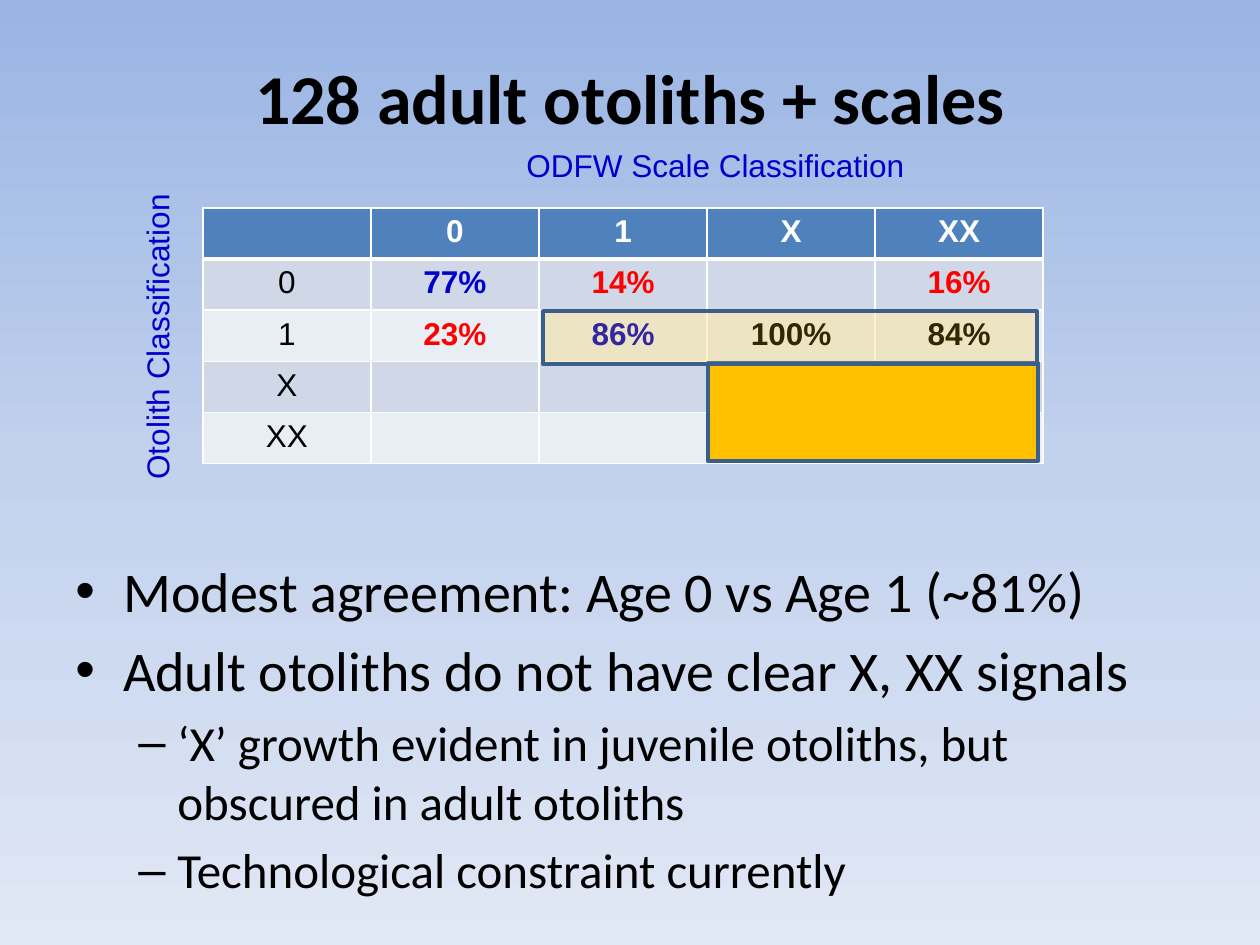
from lxml import etree
from pptx import Presentation
from pptx import util as u
from pptx.dml import color
from pptx.enum import shapes, text
from pptx.oxml import ns

BLACK, WHITE, BLUE, RED = "000000", "FFFFFF", "0000CC", "FF0000"
AMBER, OUTLINE, HEADER = "FFC000", "3A5F8C", "4F81BD"
BANDS = ["D0D8E8", "E9EDF4"]
BACKGROUND = {0: "9AB5E4", 50: "C2D1ED", 100: "E1E8F5"}
CLASSES = ["0", "1", "X", "XX"]
AGREEMENT = {
    (1, 1): ("77%", BLUE), (1, 2): ("14%", RED), (1, 4): ("16%", RED),
    (2, 1): ("23%", RED), (2, 2): ("86%", BLUE),
    (2, 3): ("100%", BLACK), (2, 4): ("84%", BLACK),
}
FINDINGS = [
    (0, "Modest agreement: Age 0 vs Age 1 (~81%)"),
    (0, "Adult otoliths do not have clear X, XX signals"),
    (1, "‘X’ growth evident in juvenile otoliths, but obscured in adult otoliths"),
    (1, "Technological constraint currently"),
]
LEVELS = [
    {"mark": "•", "size": 32, "left": 0.38, "hang": 0.38},
    {"mark": "–", "size": 28, "left": 0.81, "hang": 0.31},
]


def rgb(value):
    return color.RGBColor.from_string(value)


def place(left, top, width, height):
    return [u.Inches(length) for length in (left, top, width, height)]


def paint(fill, value):
    fill.solid()
    fill.fore_color.rgb = rgb(value)


def add_element(parent, tag, **values):
    return etree.SubElement(parent, ns.qn(tag), values)


def format_font(font, value, **formats):
    for name, setting in formats.items():
        setattr(font, name, setting)
    font.color.rgb = rgb(value)


def set_background(page):
    fill = page.background.fill
    fill.gradient()
    fill.gradient_angle = 270
    stops = page.element.find(".//" + ns.qn("a:gsLst"))
    for stop in list(stops):
        stops.remove(stop)
    for percent, value in BACKGROUND.items():
        stop = add_element(stops, "a:gs", pos=str(percent * 1000))
        add_element(stop, "a:srgbClr", val=value)


def set_title(page, words):
    title = page.shapes.title
    title.left, title.top, title.width, title.height = place(0.5, 0.14, 9, 1.25)
    frame = title.text_frame
    frame.text = words
    frame.vertical_anchor = text.MSO_ANCHOR.MIDDLE
    para = frame.paragraphs[0]
    para.alignment = text.PP_ALIGN.CENTER
    format_font(para.runs[0].font, BLACK, name="Calibri", size=u.Pt(40), bold=True)


def border_cell(cell, bottom):
    properties = cell._tc.get_or_add_tcPr()
    for side, points in {"L": 1, "R": 1, "T": 1, "B": bottom}.items():
        line = add_element(properties, "a:ln" + side, w=str(u.Pt(points)))
        add_element(add_element(line, "a:solidFill"), "a:srgbClr", val=WHITE)


def cell_content(row, column):
    if row == 0:
        return (CLASSES[column - 1] if column else "", WHITE)
    if column == 0:
        return (CLASSES[row - 1], BLACK)
    return AGREEMENT.get((row, column), ("", BLACK))


def add_agreement_table(page):
    count = len(CLASSES) + 1
    box = page.shapes.add_table(count, count, *place(1.61, 1.65, 6.67, 2.03))
    table = box.table
    table.first_row = table.horz_banding = False
    for row in range(count):
        for column in range(count):
            cell = table.cell(row, column)
            border_cell(cell, 1 if row else 3)
            paint(cell.fill, BANDS[(row - 1) % 2] if row else HEADER)
            words, value = cell_content(row, column)
            cell.text = words
            para = cell.text_frame.paragraphs[0]
            para.alignment = text.PP_ALIGN.CENTER
            format_font(para.font, value, name="Arial", size=u.Pt(18),
                        bold=row == 0 or column > 0)


def add_axis_label(page, words, position, rotation=0):
    box = page.shapes.add_textbox(*place(*position))
    box.rotation = rotation
    frame = box.text_frame
    frame.word_wrap = False
    frame.text = words
    format_font(frame.paragraphs[0].runs[0].font, BLUE, name="Arial", size=u.Pt(18))


def add_highlight(page, position, opacity=100):
    box = page.shapes.add_shape(shapes.MSO_SHAPE.RECTANGLE, *place(*position))
    box.shadow.inherit = False
    paint(box.fill, AMBER)
    box.line.color.rgb = rgb(OUTLINE)
    box.line.width = u.Pt(2)
    if opacity < 100:
        tint = box._element.spPr.find(ns.qn("a:solidFill"))[0]
        add_element(tint, "a:alpha", val=str(opacity * 1000))


def add_findings(page):
    frame = page.shapes.add_textbox(*place(0.5, 4.37, 9, 2.85)).text_frame
    frame.word_wrap = True
    for index, (depth, words) in enumerate(FINDINGS):
        level = LEVELS[depth]
        para = frame.add_paragraph() if index else frame.paragraphs[0]
        para.level = depth
        if index:
            para.space_before = u.Pt(level["size"] * 0.2)
        properties = para._p.get_or_add_pPr()
        properties.set("marL", str(u.Inches(level["left"])))
        properties.set("indent", str(-u.Inches(level["hang"])))
        add_element(properties, "a:buFont", typeface="Arial")
        add_element(properties, "a:buChar", char=level["mark"])
        span = para.add_run()
        span.text = words
        format_font(span.font, BLACK, name="Calibri", size=u.Pt(level["size"]))


def main():
    deck = Presentation()
    deck.slide_width, deck.slide_height = u.Inches(10), u.Inches(7.5)
    page = deck.slides.add_slide(deck.slide_layouts[5])
    set_background(page)
    set_title(page, "128 adult otoliths + scales")
    add_agreement_table(page)
    add_findings(page)
    add_axis_label(page, "ODFW Scale Classification", (4.08, 1.11, 3.23, 0.4))
    add_axis_label(page, "Otolith Classification", (0, 2.46, 2.49, 0.4), 270)
    add_highlight(page, (5.62, 2.88, 2.62, 0.78))
    add_highlight(page, (4.31, 2.47, 3.92, 0.42), 20)
    deck.save("out.pptx")


if __name__ == "__main__":
    main()
